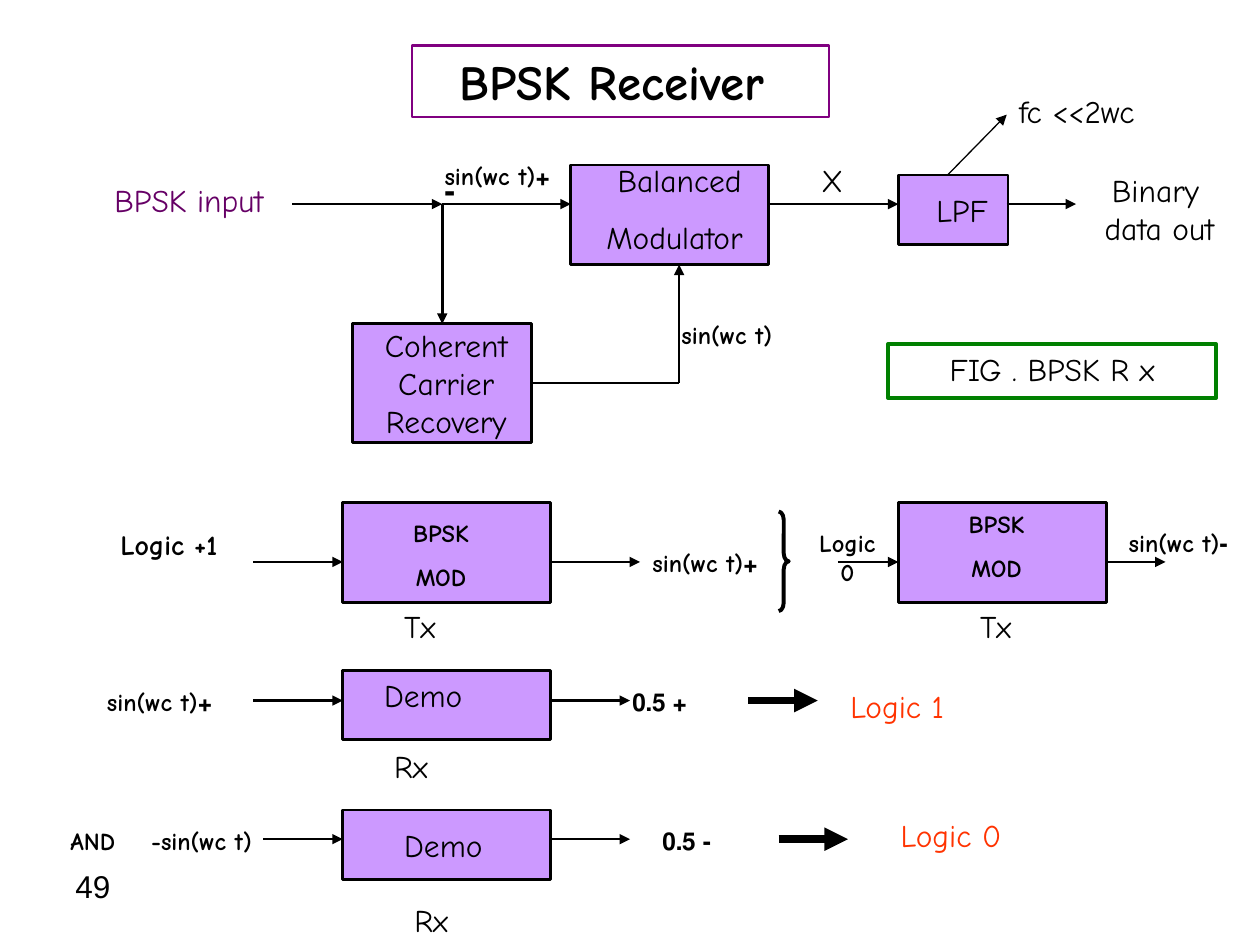
from lxml import etree
from pptx import Presentation
from pptx.dml.color import RGBColor as RGB
from pptx.enum.shapes import MSO_CONNECTOR as Conn, MSO_SHAPE as Geo
from pptx.enum.text import MSO_ANCHOR as Anchor, MSO_AUTO_SIZE as Fit, PP_ALIGN as Align
from pptx.oxml.ns import qn
from pptx.util import Inches, Pt

HUES = {"ink": "000000", "box": "CC99FF", "title": "800080",
        "input": "660066", "fig": "008000", "logic": "FF3300"}
FONT = "Comic Neue"
SMALL = {"size": 14, "bold": True}
MID = {"align": Align.CENTER}


class Board:
    """Holds the current slide and the style of its parts."""

    def __init__(self, slide):
        self.slide = slide
        self.shapes = slide.shapes

    def hue(self, name):
        return RGB.from_string(HUES[name])

    def rect(self, x, y, w, h, fill="box", line="ink", width=1.5, geo=Geo.RECTANGLE):
        shape = self.shapes.add_shape(geo, *map(Inches, (x, y, w, h)))
        shape.shadow.inherit = False
        if fill:
            shape.fill.solid()
            shape.fill.fore_color.rgb = self.hue(fill)
        else:
            shape.fill.background()
        shape.line.color.rgb = self.hue(line)
        shape.line.width = Pt(width)
        return shape

    def words(self, shape, text, size=18, bold=False, color="ink", name=FONT,
              align=Align.LEFT, rtl=True, fit=Fit.SHAPE_TO_FIT_TEXT,
              wrap=True, anchor=Anchor.TOP, gap=0.6):
        """Fill a shape with one paragraph a line; gap is a share of the size."""
        frame = shape.text_frame
        form = {"word_wrap": wrap, "auto_size": fit, "vertical_anchor": anchor}
        for key, val in form.items():
            setattr(frame, key, val)
        frame.text = text
        look = {"size": Pt(size), "bold": bold, "name": name}
        for i, para in enumerate(frame.paragraphs):
            para.alignment = align
            if i and gap:
                para.space_before = Pt(gap * size)
            if rtl:
                para._p.get_or_add_pPr().set("rtl", "1")
            for run in para.runs:
                for key, val in look.items():
                    setattr(run.font, key, val)
                run.font.color.rgb = self.hue(color)

    def label(self, x, y, w, h, text, **form):
        box = self.shapes.add_textbox(*map(Inches, (x, y, w, h)))
        self.words(box, text, **form)
        return box

    def line(self, x1, y1, x2, y2, width=1.5, head=True):
        link = self.shapes.add_connector(Conn.STRAIGHT, *map(Inches, (x1, y1, x2, y2)))
        link.line.color.rgb = self.hue("ink")
        link.line.width = Pt(width)
        if head:
            etree.SubElement(link.line._get_or_add_ln(), qn("a:tailEnd"), type="triangle")
        etree.SubElement(link._element.spPr, qn("a:effectLst"))
        return link


def tab(box, pos):
    """Set one tab stop in the first paragraph."""
    stops = etree.SubElement(box.text_frame.paragraphs[0]._p.get_or_add_pPr(), qn("a:tabLst"))
    etree.SubElement(stops, qn("a:tab"), pos=str(Inches(pos)), algn="l")


def draw(board):
    title = board.rect(3.27, 0.36, 3.31, 0.57, fill=None, line="title")
    board.words(title, "BPSK Receiver ", size=28, bold=True, rtl=False, **MID)

    # Blocks
    board.rect(4.53, 1.31, 1.57, 0.79)
    carrier = board.rect(2.8, 2.57, 1.42, 0.94)
    board.words(carrier, "Coherent \nCarrier \nRecovery ", fit=Fit.NONE, wrap=False,
                anchor=Anchor.MIDDLE, gap=0, **MID)
    for y in (6.43, 5.32):
        board.rect(2.72, y, 1.65, 0.55)
    board.rect(7.13, 1.39, 0.87, 0.55)
    for x in (2.72, 7.13):
        board.rect(x, 3.99, 1.65, 0.79)

    # Receiver wiring
    board.line(3.51, 1.62, 3.51, 2.57).end_connect(carrier, 0)
    board.line(4.22, 3.04, 5.39, 3.04, head=False).begin_connect(carrier, 3)
    board.line(5.39, 3.04, 5.39, 2.1)
    board.line(7.52, 1.39, 7.99, 0.91, width=0.75)

    # Level arrows: y, then start and end of each
    rows = [(1.62, [(2.32, 3.51), (3.51, 4.53), (6.1, 7.13), (7.99, 8.54)]),
            (4.46, [(2.01, 2.72), (4.37, 5.08), (6.65, 7.13), (8.78, 9.25)]),
            (5.56, [(2.01, 2.72), (4.37, 5)]),
            (6.66, [(2.09, 2.72), (4.37, 5)])]
    for y, spans in rows:
        for x1, x2 in spans:
            board.line(x1, y, x2, y)
    for x, y in ((5.94, 5.56), (6.18, 6.66)):
        board.line(x, y, x + 0.55, y, width=4.5)

    brace = board.rect(6.18, 4.06, 0.08, 0.79, fill=None, width=2.25, geo=Geo.RIGHT_BRACE)
    brace.adjustments[0] = 0.82
    fig = board.rect(7.05, 2.73, 2.6, 0.43, fill=None, line="fig", width=2.25)
    board.words(fig, "FIG . BPSK R x", **MID)

    # Large labels
    board.label(0.81, 1.39, 1.75, 0.4, "BPSK input", color="input")
    board.label(4.61, 1.23, 1.57, 0.85, "Balanced\nModulator ", rtl=False, **MID)
    board.label(7.28, 1.47, 0.71, 0.4, "LPF", **MID)
    board.label(8.54, 1.31, 1.26, 0.7, "Binary data out ", **MID)
    board.label(0.83, 4.14, 1.02, 0.64, "Logic +1", size=16, bold=True, **MID)
    plain = [(3.11, 4.77, 0.63, "Tx"), (7.68, 4.77, 0.63, "Tx"),
             (6.42, 1.23, 0.47, "X"), (7.99, 0.68, 1.42, " fc <<2wc"),
             (2.95, 5.32, 0.94, "Demo"), (3.11, 6.51, 0.94, "Demo"),
             (3.03, 5.88, 0.71, "Rx"), (3.19, 7.1, 0.71, "Rx")]
    for x, y, w, text in plain:
        board.label(x, y, w, 0.4, text)
    for x, y, text in ((6.65, 5.4, "Logic 1"), (7.05, 6.43, "Logic 0")):
        board.label(x, y, 1.34, 0.4, text, color="logic")

    # Small labels
    small = [(5.08, 4.3, 1.18, "+sin(wc t)"), (8.86, 4.14, 1.73, "-sin(wc t)"),
             (0.75, 5.4, 1.18, "+sin(wc t)"), (4.92, 5.4, 0.94, "+ 0.5"),
             (5.31, 2.49, 1.18, "sin(wc t)"), (3.43, 1.23, 1.18, "+sin(wc t)"),
             (5.16, 6.51, 0.94, "- 0.5")]
    for x, y, w, text in small:
        board.label(x, y, w, 0.33, text, **SMALL)
    board.label(3.43, 1.31, 0.57, 0.4, "-", bold=True, name="Roboto Slab")
    board.label(6.33, 4.14, 0.79, 0.57, "Logic 0", **SMALL, **MID)
    for x, y in ((2.87, 4.06), (7.28, 3.99)):
        board.label(x, y, 1.26, 0.68, "BPSK\nMOD", **SMALL, **MID)
    tab(board.label(0.46, 6.51, 2.02, 0.33, "AND\t-sin(wc t)", rtl=False, **SMALL), 0.64)
    board.label(0.5, 6.83, 2.33, 0.52, "49", name="Arial", rtl=False, fit=Fit.NONE)


def main():
    deck = Presentation()
    deck.slide_width, deck.slide_height = Inches(10), Inches(7.5)
    draw(Board(deck.slides.add_slide(deck.slide_layouts[6])))
    deck.save("out.pptx")


if __name__ == "__main__":
    main()
